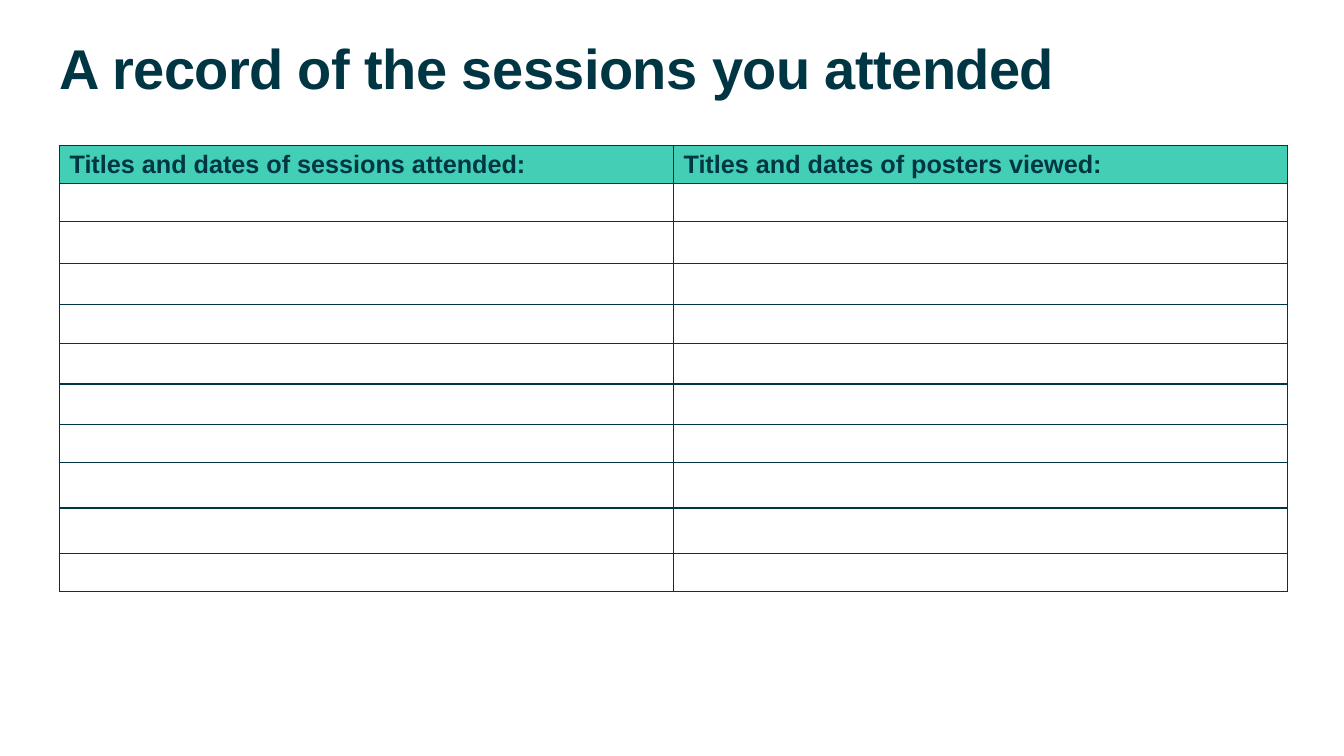
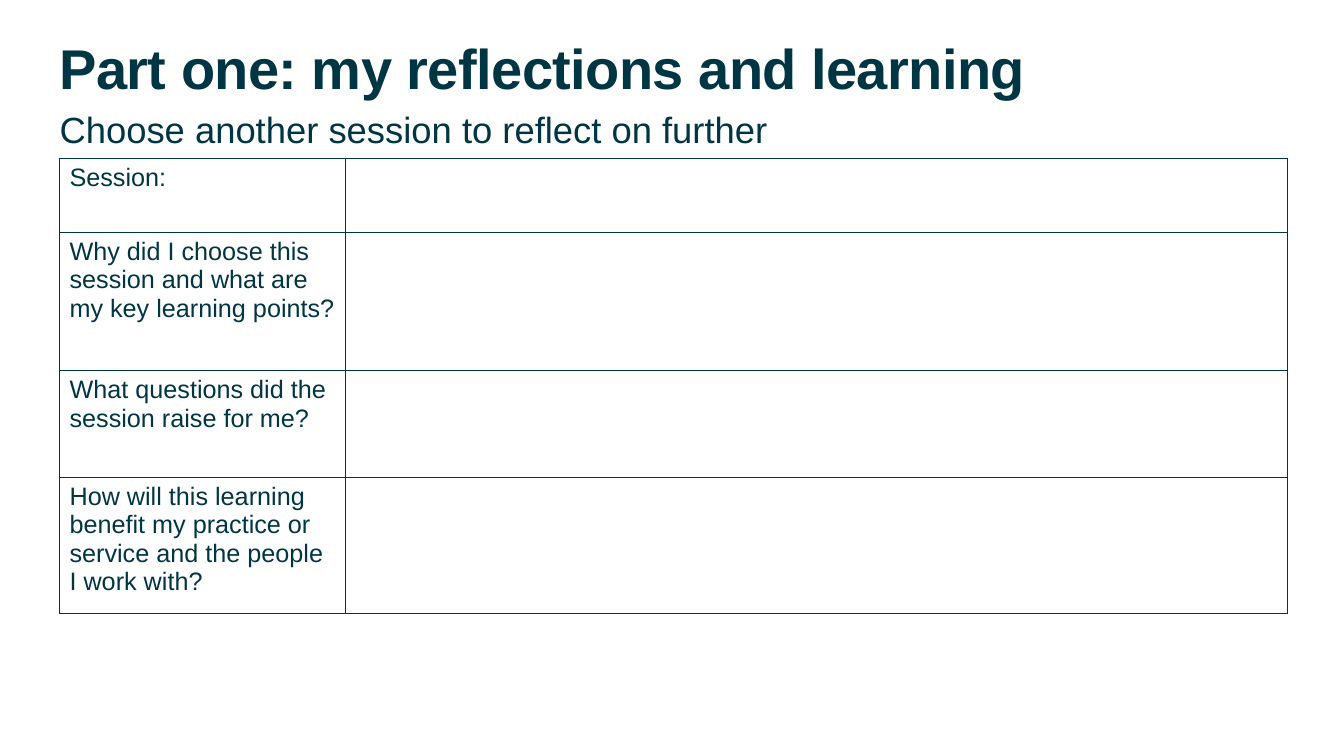
from dataclasses import dataclass

from lxml.etree import SubElement
from pptx import Presentation
from pptx.dml.color import RGBColor
from pptx.enum.text import MSO_ANCHOR, MSO_AUTO_SIZE, PP_ALIGN
from pptx.oxml.ns import qn
from pptx.util import Inches, Pt

SESSIONS = {
    "title": "A record of the sessions you attended",
    "top": 1.44,
    "columns": [6.09, 6.09],
    "rows": [0.38, 0.38, 0.41, 0.41, 0.39, 0.4, 0.4, 0.38, 0.45, 0.45, 0.38],
    "cells": {
        (0, 0): "Titles and dates of sessions attended:",
        (0, 1): "Titles and dates of posters viewed:",
    },
    "header": True,
}
REFLECTIONS = {
    "title": "Part one: my reflections and learning",
    "subtitle": "Choose another session to reflect on further",
    "top": 1.57,
    "columns": [2.84, 9.34],
    "rows": [0.74, 1.37, 1.06, 1.35],
    "cells": {
        (0, 0): "Session:",
        (1, 0): "Why did I choose this session and what are my key learning points?",
        (2, 0): "What questions did the session raise for me?",
        (3, 0): "How will this learning benefit my practice or service and the people I work with?",
    },
    "header": False,
}


@dataclass(frozen=True)
class Theme:
    font: str = "Arial"
    ink: str = "003643"
    accent: str = "43CFB5"
    title_size: int = 40
    subtitle_size: int = 26
    cell_size: int = 18
    blank_size: int = 12
    border: int = 1
    left: float = 0.59
    width: float = 12.18


THEME = Theme()


def style(paragraph, size, bold=False, spacing=None):
    paragraph.alignment = PP_ALIGN.LEFT
    paragraph.line_spacing = spacing
    paragraph.font.name = THEME.font
    paragraph.font.size = Pt(size)
    paragraph.font.bold = bold
    paragraph.font.color.rgb = RGBColor.from_string(THEME.ink)


def write(box, text, top, height, size, bold, spacing):
    box.left, box.width = Inches(THEME.left), Inches(THEME.width)
    box.top, box.height = Inches(top), Inches(height)
    frame = box.text_frame
    frame.text = text
    frame.word_wrap = True
    frame.auto_size = MSO_AUTO_SIZE.NONE
    frame.vertical_anchor = MSO_ANCHOR.TOP
    frame.margin_left = frame.margin_right = frame.margin_top = frame.margin_bottom = 0
    style(frame.paragraphs[0], size, bold, spacing)


def outline(cell):
    properties = cell._tc.get_or_add_tcPr()
    for position, side in enumerate(("lnL", "lnR", "lnT", "lnB")):
        line = SubElement(properties, qn(f"a:{side}"), w=str(Pt(THEME.border)))
        fill = SubElement(line, qn("a:solidFill"))
        SubElement(fill, qn("a:srgbClr"), val=THEME.ink)
        properties.insert(position, line)


def add_grid(page, content):
    columns, rows = content["columns"], content["rows"]
    table = page.shapes.add_table(
        len(rows), len(columns), Inches(THEME.left), Inches(content["top"]),
        Inches(sum(columns)), Inches(sum(rows))).table
    table.first_row = content["header"]
    table.horz_banding = False
    for column, width in zip(table.columns, columns):
        column.width = Inches(width)
    for row_index, (row, height) in enumerate(zip(table.rows, rows)):
        row.height = Inches(height)
        heading = content["header"] and row_index == 0
        for column_index, cell in enumerate(row.cells):
            text = content["cells"].get((row_index, column_index), "")
            cell.text = text
            style(cell.text_frame.paragraphs[0],
                  THEME.cell_size if text else THEME.blank_size, heading)
            if heading:
                cell.fill.solid()
                cell.fill.fore_color.rgb = RGBColor.from_string(THEME.accent)
            else:
                cell.fill.background()
            outline(cell)


def add_page(deck, content):
    page = deck.slides.add_slide(deck.slide_layouts[5])
    title = page.shapes.title
    write(title, content["title"], 0.41, 0.79, THEME.title_size, True, 0.9)
    title.text_frame.paragraphs[0].runs[0].font._element.set("spc", "-40")
    add_grid(page, content)
    if "subtitle" in content:
        box = page.shapes.add_textbox(0, 0, 0, 0)
        write(box, content["subtitle"], 1.05, 0.39, THEME.subtitle_size, False, 1.02)


def main():
    deck = Presentation()
    deck.slide_width, deck.slide_height = Inches(13.33), Inches(7.5)
    for content in (SESSIONS, REFLECTIONS):
        add_page(deck, content)
    deck.save("out.pptx")


if __name__ == "__main__":
    main()
